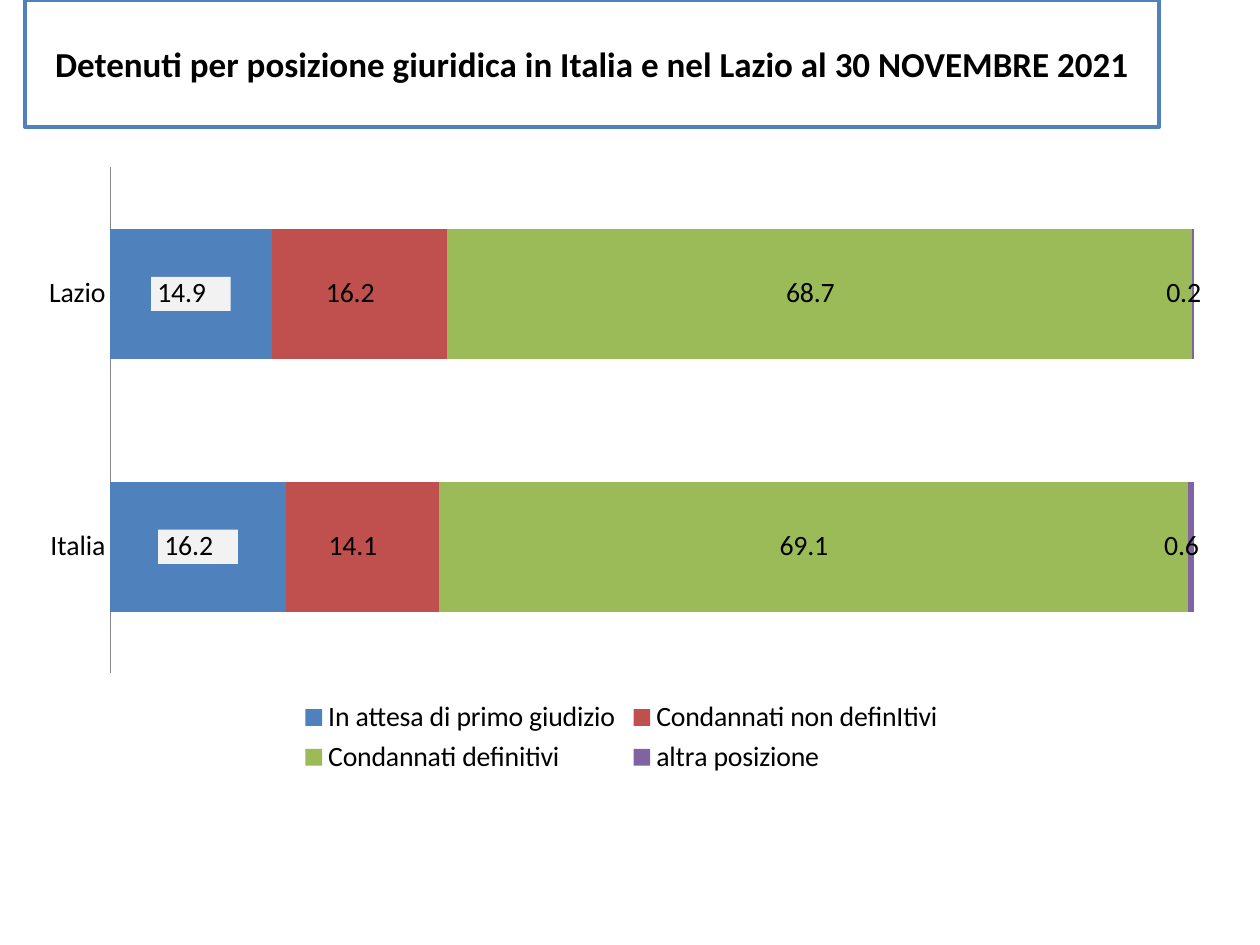
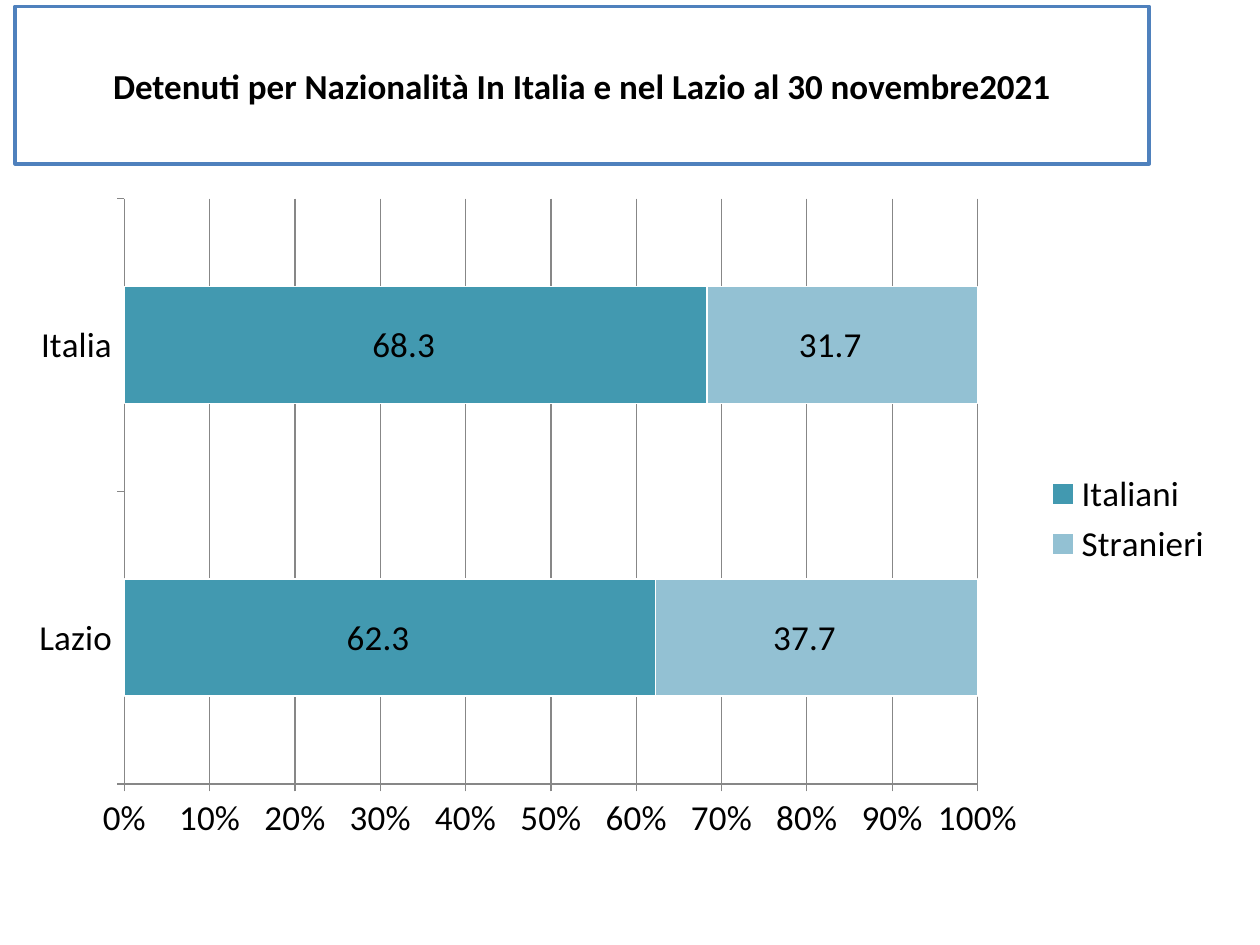
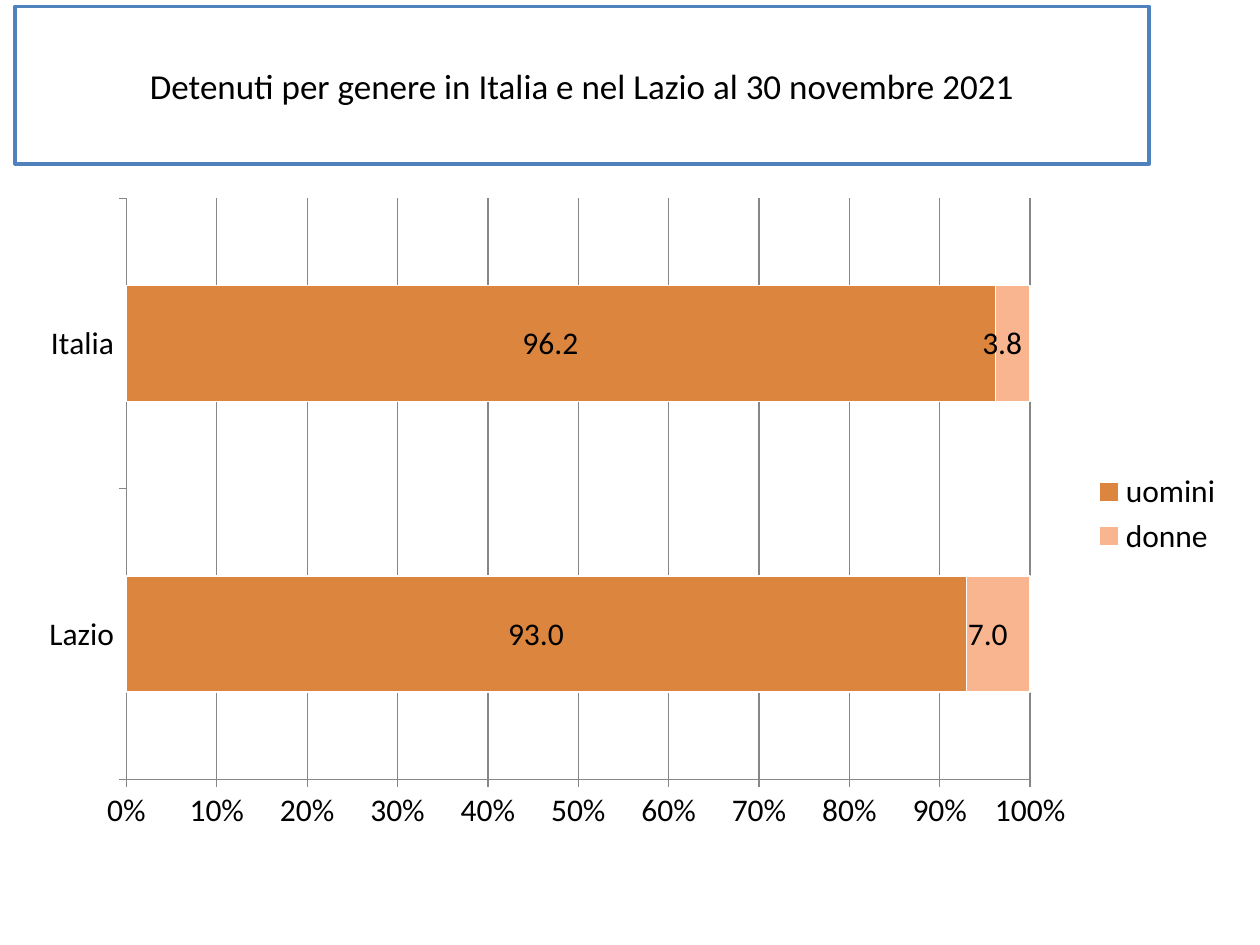
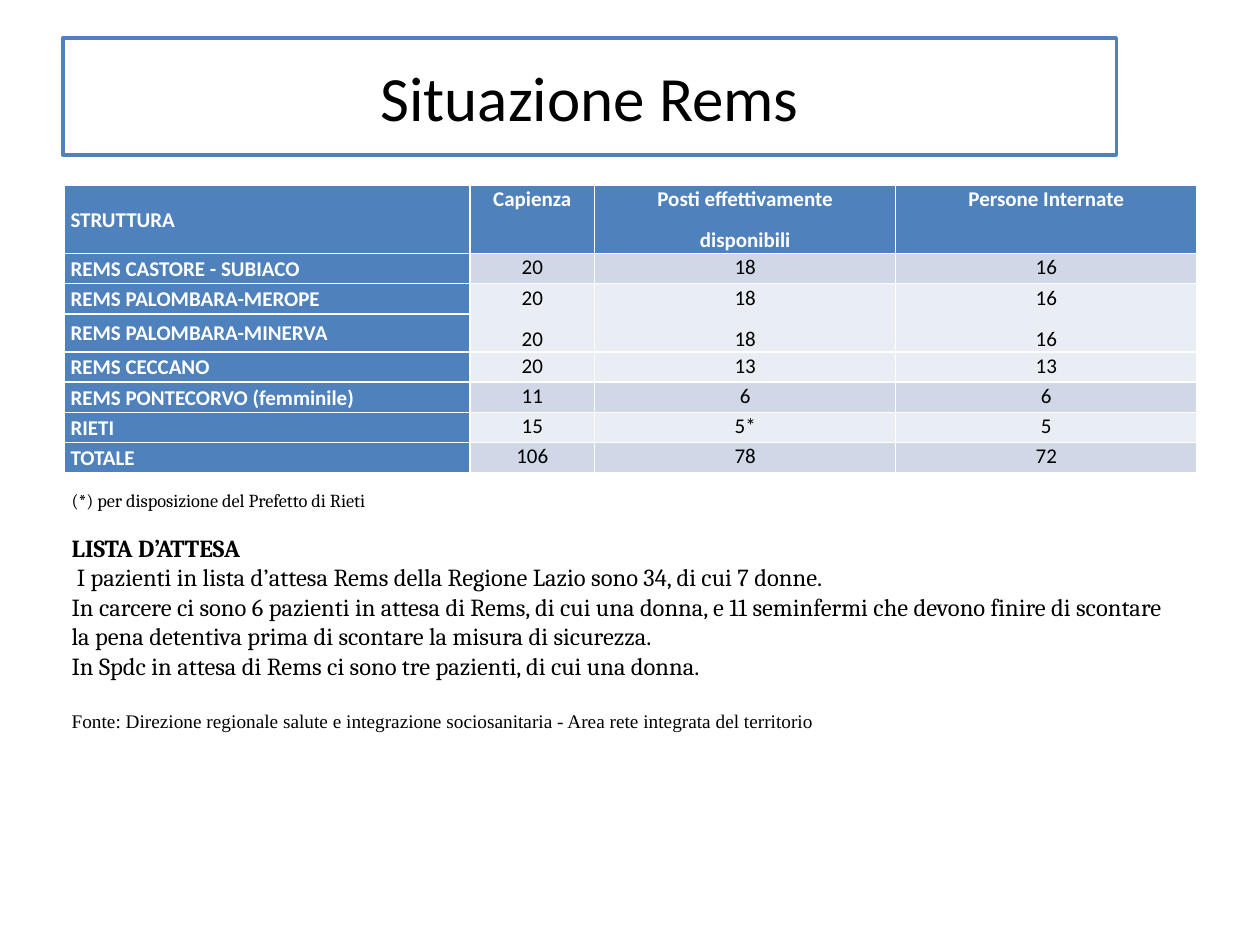
from pptx import Presentation
from pptx.chart.data import CategoryChartData
from pptx.dml.color import RGBColor
from pptx.enum.chart import XL_CHART_TYPE as ChartType
from pptx.enum.chart import XL_LABEL_POSITION as LabelPosition
from pptx.enum.chart import XL_LEGEND_POSITION as LegendPosition
from pptx.enum.chart import XL_TICK_MARK as TickMark
from pptx.enum.text import MSO_ANCHOR as Anchor
from pptx.enum.text import PP_ALIGN as Align
from pptx.util import Inches, Pt

BLUE, WHITE, BLACK, GRAY = "4F81BD", "FFFFFF", "000000", "878787"
LABEL_BACK = "F2F2F2"
DARK_BAND, LIGHT_BAND = "D0D8E8", "E9EDF4"
NUMBER_FORMAT = r"_-* #,##0.0\ _€_-;\-* #,##0.0\ _€_-"
REGIONS = ["Lazio", "Italia"]

CHART_SLIDES = [
    {
        "title": "Detenuti per posizione giuridica in Italia e nel Lazio al 30 NOVEMBRE 2021",
        "title_box": (0.2, 0, 9, 1.01), "bold": True,
        "chart_box": (0.2, 1.23, 9.53, 4.96), "size": 16, "gap": 95,
        "legend": LegendPosition.BOTTOM, "scale": False,
        "series": [
            ("In attesa di primo giudizio", (14.9, 16.2), BLUE),
            ("Condannati non definItivi", (16.2, 14.1), "C0504D"),
            ("Condannati definitivi", (68.7, 69.1), "9BBB59"),
            ("altra posizione", (0.2, 0.6), "8064A2"),
        ],
    },
    {
        "title": "Detenuti per Nazionalità In Italia e nel Lazio al 30 novembre2021",
        "title_box": (0.12, 0.05, 9, 1.25), "bold": True,
        "chart_box": (0.12, 1.47, 9.61, 5.3), "size": 20, "gap": 150,
        "legend": LegendPosition.RIGHT, "scale": True,
        "series": [
            ("Italiani", (62.3, 68.3), "4299B0"),
            ("Stranieri", (37.7, 31.7), "93C1D3"),
        ],
    },
    {
        "title": "Detenuti per genere in Italia e nel Lazio al 30 novembre 2021",
        "title_box": (0.12, 0.05, 9, 1.25), "bold": False,
        "chart_box": (0.2, 1.47, 9.61, 5.22), "size": 18, "gap": 150,
        "legend": LegendPosition.RIGHT, "scale": True,
        "series": [
            ("uomini", (93.0, 96.2), "DC853E"),
            ("donne", (7.0, 3.8), "F9B590"),
        ],
    },
]

REMS_TITLE = "Situazione Rems"
REMS_ROWS = [
    (0.54, BLUE, ["STRUTTURA", "Capienza", "Posti effettivamente\ndisponibili", "Persone Internate"]),
    (0.24, DARK_BAND, ["REMS CASTORE - SUBIACO", "20", "18", "16"]),
    (0.24, LIGHT_BAND, ["REMS PALOMBARA-MEROPE", "20\n20", "18\n18", "16\n16"]),
    (0.3, LIGHT_BAND, ["REMS PALOMBARA-MINERVA", "", "", ""]),
    (0.24, LIGHT_BAND, ["REMS CECCANO", "20", "13", "13"]),
    (0.24, DARK_BAND, ["REMS PONTECORVO (femminile)", "11", "6", "6"]),
    (0.24, LIGHT_BAND, ["RIETI", "15", "5*", "5"]),
    (0.24, DARK_BAND, ["TOTALE", "106", "78", "72"]),
]
REMS_COLUMNS = [3.22, 0.99, 2.39, 2.39]
MERGED_ROW = 2

FOOTNOTE = [("(*) per disposizione del Prefetto di Rieti", "Cambria", 10.5, False, 0, 0)]
WAITING_LIST = [
    ("LISTA D’ATTESA", "Cambria", 14, True, 0, 0),
    ("I pazienti in lista d’attesa Rems della Regione Lazio sono 34, di cui 7 donne.",
     "Cambria", 14, False, 0, 3),
    ("In carcere ci sono 6 pazienti in attesa di Rems, di cui una donna, e 11 seminfermi che devono "
     "finire di scontare la pena detentiva prima di scontare la misura di sicurezza.",
     "Cambria", 14, False, 0, 0),
    ("In Spdc in attesa di Rems ci sono tre pazienti, di cui una donna.", "Cambria", 14, False, 0, 0),
    ("Fonte: Direzione regionale salute e integrazione sociosanitaria - Area rete integrata del territorio",
     "Times New Roman", 11, False, 17, 0),
]


def color(value):
    return RGBColor.from_string(value)


def paint(fill, value):
    fill.solid()
    fill.fore_color.rgb = color(value)


def draw_line(line, value, width):
    line.color.rgb = color(value)
    line.width = Pt(width)


def set_font(font, size, name="Calibri", value=BLACK, bold=False):
    font.name, font.size, font.bold = name, Pt(size), bold
    font.color.rgb = color(value)


def inches(box):
    return [Inches(length) for length in box]


def add_titled_slide(presentation, text, box, size, bold=False):
    slide = presentation.slides.add_slide(presentation.slide_layouts[5])
    title = slide.shapes.title
    title.left, title.top, title.width, title.height = inches(box)
    paint(title.fill, WHITE)
    draw_line(title.line, BLUE, 2)
    title.text_frame.text = text
    title.text_frame.vertical_anchor = Anchor.MIDDLE
    paragraph = title.text_frame.paragraphs[0]
    paragraph.alignment = Align.CENTER
    set_font(paragraph.font, size, bold=bold)
    return slide


def style_axes(chart, scale):
    category_axis, value_axis = chart.category_axis, chart.value_axis
    draw_line(category_axis.format.line, GRAY, 0.75)
    category_axis.has_major_gridlines = False
    category_axis.reverse_order = not scale
    category_axis.major_tick_mark = TickMark.OUTSIDE if scale else TickMark.NONE
    value_axis.visible = scale
    value_axis.has_major_gridlines = scale
    if scale:
        draw_line(value_axis.format.line, GRAY, 0.75)
        draw_line(value_axis.major_gridlines.format.line, GRAY, 0.75)
        value_axis.major_tick_mark = TickMark.OUTSIDE
        value_axis.tick_labels.number_format = "0%"
        value_axis.tick_labels.number_format_is_linked = False


def add_bar_chart(slide, content):
    data = CategoryChartData()
    data.categories = REGIONS
    for name, values, _ in content["series"]:
        data.add_series(name, values)
    chart = slide.shapes.add_chart(
        ChartType.BAR_STACKED_100, *inches(content["chart_box"]), data).chart
    set_font(chart.font, content["size"])
    chart.has_title = False
    chart.has_legend = True
    chart.legend.position = content["legend"]
    chart.legend.include_in_layout = False
    style_axes(chart, content["scale"])

    plot = chart.plots[0]
    plot.gap_width, plot.overlap, plot.vary_by_categories = content["gap"], 100, False
    for series, (_, _, fill) in zip(plot.series, content["series"]):
        paint(series.format.fill, fill)
        if content["scale"]:
            draw_line(series.format.line, WHITE, 0.75)
        labels = series.data_labels
        labels.show_value = True
        labels.position = LabelPosition.CENTER
        labels.number_format = NUMBER_FORMAT
        labels.number_format_is_linked = False
        set_font(labels.font, content["size"])
    if not content["scale"]:
        add_label_background(plot.series[0].data_labels)


def add_label_background(labels):
    element = labels._element
    properties = element.makeelement(
        "{http://schemas.openxmlformats.org/drawingml/2006/chart}spPr", {})
    namespace = "{http://schemas.openxmlformats.org/drawingml/2006/main}"
    fill = properties.makeelement(namespace + "solidFill", {})
    fill.append(fill.makeelement(namespace + "srgbClr", {"val": LABEL_BACK}))
    properties.append(fill)
    element.txPr.addprevious(properties)


def fill_cell(cell, text, band, is_label):
    paint(cell.fill, band)
    cell.margin_left = cell.margin_right = Inches(0.05)
    cell.margin_top = cell.margin_bottom = 0
    cell.vertical_anchor = Anchor.MIDDLE if is_label else Anchor.TOP
    cell.text_frame.text = text
    on_blue = band == BLUE
    for paragraph in cell.text_frame.paragraphs:
        paragraph.alignment = Align.LEFT if is_label else Align.CENTER
        paragraph.line_spacing = 1.06
        paragraph.space_after = Pt(8)
        set_font(paragraph.font, 12, value=WHITE if on_blue else BLACK, bold=on_blue)


def add_rems_table(slide):
    heights = [height for height, _, _ in REMS_ROWS]
    box = inches((0.51, 1.47, sum(REMS_COLUMNS), sum(heights)))
    table = slide.shapes.add_table(len(REMS_ROWS), len(REMS_COLUMNS), *box).table
    for column, width in zip(table.columns, REMS_COLUMNS):
        column.width = Inches(width)
    for row_index, (height, band, texts) in enumerate(REMS_ROWS):
        table.rows[row_index].height = Inches(height)
        for column_index, text in enumerate(texts):
            is_label = column_index == 0
            fill_cell(table.cell(row_index, column_index), text, BLUE if is_label else band, is_label)
    for column_index in range(1, len(REMS_COLUMNS)):
        table.cell(MERGED_ROW, column_index).merge(table.cell(MERGED_ROW + 1, column_index))


def add_text(slide, box, lines):
    frame = slide.shapes.add_textbox(*inches(box)).text_frame
    frame.word_wrap = True
    frame.text = "\n".join(line[0] for line in lines)
    for paragraph, (_, name, size, bold, before, indent) in zip(frame.paragraphs, lines):
        if before:
            paragraph.space_before = Pt(before)
        if indent:
            paragraph._p.get_or_add_pPr().set("indent", str(Pt(indent)))
        set_font(paragraph.font, size, name, bold=bold)


def main():
    presentation = Presentation()
    presentation.slide_width, presentation.slide_height = Inches(10), Inches(7.5)
    for content in CHART_SLIDES:
        slide = add_titled_slide(
            presentation, content["title"], content["title_box"], 20, content["bold"])
        add_bar_chart(slide, content)
    slide = add_titled_slide(presentation, REMS_TITLE, (0.5, 0.3, 8.36, 0.93), 36)
    add_rems_table(slide)
    add_text(slide, (0.47, 4.18, 9.04, 1.92), WAITING_LIST)
    add_text(slide, (0.47, 3.83, 5.55, 0.29), FOOTNOTE)
    presentation.save("out.pptx")


if __name__ == "__main__":
    main()
